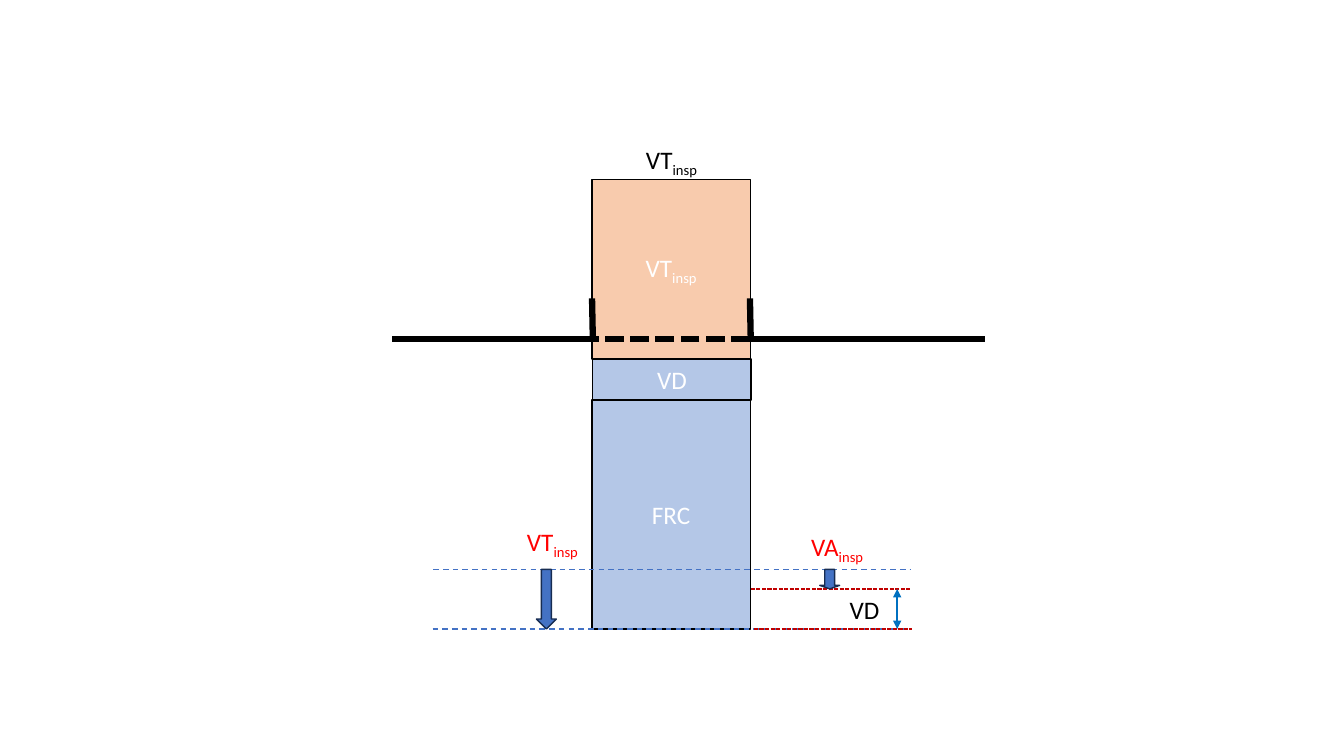
import dataclasses
import typing

import lxml.etree
import pptx
import pptx.dml.color
import pptx.enum.dml
import pptx.enum.shapes
import pptx.enum.text
import pptx.oxml.ns
import pptx.presentation
import pptx.slide
import pptx.text.text
import pptx.util

Dash = pptx.enum.dml.MSO_LINE
Preset = pptx.enum.shapes.MSO_SHAPE


@dataclasses.dataclass(frozen=True)
class Theme:
    font: str = "Calibri"
    size: float = 18
    thin: float = 1
    thick: float = 4.5
    black: str = "000000"
    white: str = "FFFFFF"
    volume: str = "B4C7E7"
    tidal: str = "F8CBAD"
    emphasis: str = "FF0000"
    level: str = "4472C4"
    arrow_edge: str = "172C51"
    dead_space: str = "C00000"
    span: str = "0070C0"


THEME = Theme()


@dataclasses.dataclass(frozen=True)
class Block:
    text: str
    subscript: str
    left: float
    top: float
    bottom: float
    fill: str


@dataclasses.dataclass(frozen=True)
class Line:
    start: tuple[float, float]
    end: tuple[float, float]
    color: str = THEME.black
    width: float = THEME.thick
    dash: typing.Optional[Dash] = None
    arrowheads: bool = False


@dataclasses.dataclass(frozen=True)
class Label:
    text: str
    subscript: str
    left: float
    top: float
    width: float
    color: str


@dataclasses.dataclass(frozen=True)
class Arrow:
    center: float
    bottom: float
    head_ratio: float


COLUMN_LEFT, COLUMN_RIGHT, COLUMN_WIDTH = 14.92, 18.9, 3.99
COLUMN_TOP, DEAD_SPACE_TOP, RESIDUAL_TOP, COLUMN_BOTTOM = 4.53, 9.05, 10.08, 15.95 - 0.1
CHEST_LINE, TICK_TOP = 8.54, 7.52
UPPER_LEVEL, MIDDLE_LEVEL = 14.35, 14.84
LABEL_HEIGHT, ARROW_WIDTH = 1.02, 0.5

BLOCKS = (
    Block("FRC", "", COLUMN_LEFT, RESIDUAL_TOP, COLUMN_BOTTOM, THEME.volume),
    Block("VD", "", COLUMN_LEFT + 0.02, DEAD_SPACE_TOP, RESIDUAL_TOP, THEME.volume),
    Block("VT", "insp", COLUMN_LEFT, COLUMN_TOP, DEAD_SPACE_TOP, THEME.tidal),
)
LINES = (
    Line((COLUMN_LEFT, TICK_TOP), (COLUMN_LEFT + 0.02, CHEST_LINE)),
    Line((24.82, CHEST_LINE), (COLUMN_RIGHT, CHEST_LINE)),
    Line((COLUMN_LEFT + 0.02, CHEST_LINE), (9.88, CHEST_LINE)),
    Line((COLUMN_RIGHT, CHEST_LINE), (COLUMN_LEFT + 0.02, CHEST_LINE), dash=Dash.SQUARE_DOT),
    Line((COLUMN_RIGHT, TICK_TOP), (COLUMN_RIGHT + 0.02, CHEST_LINE)),
    Line((10.92, UPPER_LEVEL), (22.94, UPPER_LEVEL), THEME.level, THEME.thin, Dash.DASH),
    Line((10.9, COLUMN_BOTTOM), (22.91, COLUMN_BOTTOM), THEME.level, THEME.thin, Dash.DASH),
    Line((19, COLUMN_BOTTOM), (22.99, COLUMN_BOTTOM), THEME.dead_space, THEME.thin, Dash.SQUARE_DOT),
    Line((18.92, MIDDLE_LEVEL), (22.94, MIDDLE_LEVEL), THEME.dead_space, THEME.thin, Dash.SQUARE_DOT),
    Line((22.61, MIDDLE_LEVEL), (22.61, COLUMN_BOTTOM), THEME.span, THEME.thin, arrowheads=True),
)
LABELS = (
    Label("VT", "insp", 13.03, 13.13, 1.91, THEME.emphasis),
    Label("VT", "insp", 16.03, 3.51, 1.91, THEME.black),
    Label("VD", "", 21.16, 14.86, 1.27, THEME.black),
    Label("VA", "insp", 20.19, 13.26, 1.93, THEME.emphasis),
)
ARROWS = (
    Arrow(13.77, COLUMN_BOTTOM, 0.5),
    Arrow(20.91, MIDDLE_LEVEL, 0.18),
)


def rgb(color: str) -> pptx.dml.color.RGBColor:
    return pptx.dml.color.RGBColor.from_string(color)


def write_text(
    frame: pptx.text.text.TextFrame,
    text: str,
    *,
    subscript: str = "",
    color: str = THEME.black,
    size: float = THEME.size,
    alignment: typing.Optional[pptx.enum.text.PP_ALIGN] = None,
) -> None:
    paragraph = frame.paragraphs[0]
    paragraph.alignment = alignment
    for content, baseline in ((text, None), (subscript, "-25000")):
        if not content:
            continue
        run = paragraph.add_run()
        run.text = content
        run.font.name = THEME.font
        run.font.size = pptx.util.Pt(size)
        run.font.color.rgb = rgb(color)
        if baseline:
            run.font._element.set("baseline", baseline)


def draw_shape(
    slide: pptx.slide.Slide,
    preset: Preset,
    box: tuple[float, float, float, float],
    fill: str,
    edge: str,
):
    shape = slide.shapes.add_shape(preset, *map(pptx.util.Cm, box))
    shape.shadow.inherit = False
    shape.fill.solid()
    shape.fill.fore_color.rgb = rgb(fill)
    shape.line.color.rgb = rgb(edge)
    shape.line.width = pptx.util.Pt(THEME.thin)
    return shape


def draw_block(slide: pptx.slide.Slide, block: Block) -> None:
    box = (block.left, block.top, COLUMN_WIDTH, block.bottom - block.top)
    shape = draw_shape(slide, Preset.RECTANGLE, box, block.fill, THEME.black)
    write_text(
        shape.text_frame,
        block.text,
        subscript=block.subscript,
        color=THEME.white,
        alignment=pptx.enum.text.PP_ALIGN.CENTER,
    )


def draw_line(slide: pptx.slide.Slide, line: Line) -> None:
    connector = slide.shapes.add_connector(
        pptx.enum.shapes.MSO_CONNECTOR.STRAIGHT, *map(pptx.util.Cm, line.start + line.end)
    )
    connector.line.color.rgb = rgb(line.color)
    connector.line.width = pptx.util.Pt(line.width)
    if line.dash is not None:
        connector.line.dash_style = line.dash
    properties = connector._element.spPr
    if line.arrowheads:
        outline = properties.find(pptx.oxml.ns.qn("a:ln"))
        for tag in ("a:headEnd", "a:tailEnd"):
            lxml.etree.SubElement(outline, pptx.oxml.ns.qn(tag), type="triangle")
    lxml.etree.SubElement(properties, pptx.oxml.ns.qn("a:effectLst"))


def draw_label(slide: pptx.slide.Slide, label: Label) -> None:
    box = (label.left, label.top, label.width, LABEL_HEIGHT)
    frame = slide.shapes.add_textbox(*map(pptx.util.Cm, box)).text_frame
    frame.word_wrap = False
    frame.auto_size = pptx.enum.text.MSO_AUTO_SIZE.SHAPE_TO_FIT_TEXT
    write_text(frame, label.text, subscript=label.subscript, color=label.color)


def draw_arrow(slide: pptx.slide.Slide, arrow: Arrow) -> None:
    box = (arrow.center - ARROW_WIDTH / 2, UPPER_LEVEL, ARROW_WIDTH, arrow.bottom - UPPER_LEVEL)
    shape = draw_shape(slide, Preset.DOWN_ARROW, box, THEME.level, THEME.arrow_edge)
    shape.adjustments[1] = arrow.head_ratio


def main() -> None:
    presentation = pptx.Presentation()
    presentation.slide_width = pptx.util.Cm(33.87)
    presentation.slide_height = pptx.util.Cm(19.05)
    slide = presentation.slides.add_slide(presentation.slide_layouts.get_by_name("Blank"))
    for items, draw in (
        (BLOCKS, draw_block),
        (LINES, draw_line),
        (LABELS, draw_label),
        (ARROWS, draw_arrow),
    ):
        for item in items:
            draw(slide, item)
    presentation.save("out.pptx")


if __name__ == "__main__":
    main()
